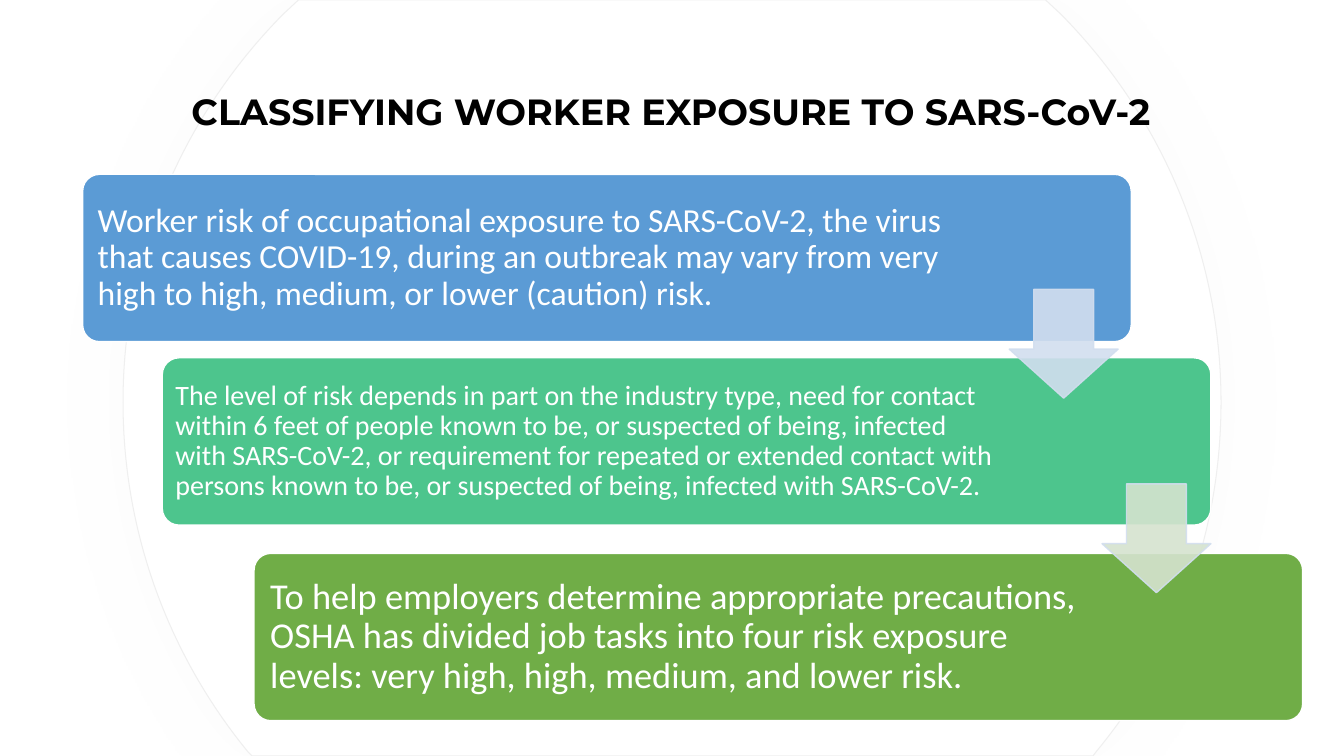
from dataclasses import dataclass

from lxml.etree import SubElement
from pptx import Presentation
from pptx.dml.color import RGBColor
from pptx.enum.shapes import MSO_SHAPE
from pptx.enum.text import MSO_ANCHOR, PP_ALIGN
from pptx.oxml.ns import qn
from pptx.util import Inches, Pt

TITLE = "CLASSIFYING WORKER EXPOSURE TO SARS-CoV-2"
CARDS = [
    dict(left=0.82, top=1.73, wide=8.61, inset=0.1, size=24, fill="5B9BD5",
         text="Worker risk of occupational exposure to SARS-CoV-2, the virus that causes "
              "COVID-19, during an outbreak may vary from very high to high, medium, or "
              "lower (caution) risk."),
    dict(left=1.61, top=3.55, wide=8.31, inset=0.08, size=20, fill="4DC58D",
         text="The level of risk depends in part on the industry type, need for contact "
              "within 6 feet of people known to be, or suspected of being, infected with "
              "SARS-CoV-2, or requirement for repeated or extended contact with persons "
              "known to be, or suspected of being, infected with SARS-CoV-2."),
    dict(left=2.52, top=5.49, wide=8.31, inset=0.11, size=26, fill="70AD47",
         text="To help employers determine appropriate precautions, OSHA has divided job "
              "tasks into four risk exposure levels: very high, high, medium, and lower risk."),
]
ARROWS = [(10.01, 2.87, "D2DEEF"), (10.93, 4.8, "D5E3CF")]
START = (2.96, 0)
RING = [
    ("line", [(10.37, 0), (10.52, 0.14)]),
    ("curve", [(11.5, 1.13), (12.11, 2.49), (12.11, 3.99)]),
    ("curve", [(12.11, 5.31), (11.65, 6.52), (10.87, 7.46)]),
    ("line", [(10.84, 7.5), (2.5, 7.5), (2.46, 7.46)]),
    ("curve", [(1.69, 6.52), (1.22, 5.31), (1.22, 3.99)]),
    ("curve", [(1.22, 2.49), (1.83, 1.13), (2.81, 0.14)]),
]
CARD_W, CARD_H, PAD, ARROW = 10.4, 1.66, 0.05, 1.08


@dataclass(frozen=True)
class Theme:
    body: str = "Calibri"
    head: str = "Montserrat"
    head_size: int = 26
    ink: str = "000000"
    paper: str = "FFFFFF"
    rim: str = "EFEFEF"
    shade: str = "D9D9D9"
    edge: str = "D2DEEF"


THEME = Theme()


def color(code):
    return RGBColor.from_string(code)


def paint(shape, fill, line, width=1):
    shape.shadow.inherit = False
    shape.fill.solid()
    shape.fill.fore_color.rgb = color(fill)
    shape.line.color.rgb = color(line)
    shape.line.width = Pt(width)


def fade(shape, share):
    for node in shape.element.spPr.iter(qn("a:srgbClr")):
        SubElement(node, qn("a:alpha"), val=str(share * 1000))


def write(frame, text, font, size, ink, align, bold=False):
    frame.word_wrap = True
    frame.vertical_anchor = MSO_ANCHOR.MIDDLE
    para = frame.paragraphs[0]
    para.alignment = align
    para.line_spacing = 0.9
    run = para.add_run()
    run.text = text
    run.font.name, run.font.size, run.font.bold = font, Pt(size), bold
    run.font.color.rgb = color(ink)


def bend(ring):
    legs = iter(list(ring.element.spPr.iter(qn("a:lnTo"))))
    for kind, dots in RING:
        group = [next(legs) for _ in dots]
        if kind == "curve":
            first, *rest = group
            first.tag = qn("a:cubicBezTo")
            for leg in rest:
                first.append(leg[0])
                leg.getparent().remove(leg)


def add_ring(shapes):
    pen = shapes.build_freeform(Inches(START[0]), Inches(START[1]))
    pen.add_line_segments([(Inches(x), Inches(y)) for _, dots in RING for x, y in dots])
    ring = pen.convert_to_shape()
    bend(ring)
    paint(ring, THEME.paper, THEME.rim, 0.75)
    glow = SubElement(ring.element.spPr.find(qn("a:effectLst")), qn("a:outerShdw"),
                      blurRad=str(Pt(50)), dist="0", dir="0", algn="ctr", rotWithShape="0")
    tint = SubElement(glow, qn("a:srgbClr"), val=THEME.shade)
    SubElement(tint, qn("a:alpha"), val="8000")


def add_card(shapes, left, top, wide, inset, size, fill, text):
    card = shapes.add_shape(MSO_SHAPE.ROUNDED_RECTANGLE, Inches(left), Inches(top),
                            Inches(CARD_W), Inches(CARD_H))
    card.adjustments[0] = 0.1
    paint(card, fill, THEME.paper)
    box = shapes.add_textbox(Inches(left + PAD), Inches(top + PAD),
                             Inches(wide), Inches(CARD_H - 2 * PAD))
    frame = box.text_frame
    frame.margin_left = frame.margin_right = Inches(inset)
    frame.margin_top = frame.margin_bottom = Inches(inset)
    write(frame, text, THEME.body, size, THEME.paper, PP_ALIGN.LEFT)


def add_arrow(shapes, left, top, fill):
    arrow = shapes.add_shape(MSO_SHAPE.DOWN_ARROW, Inches(left), Inches(top),
                             Inches(ARROW), Inches(ARROW))
    arrow.adjustments[0], arrow.adjustments[1] = 0.55, 0.45
    paint(arrow, fill, THEME.edge)
    fade(arrow, 90)


def main():
    """Build the worker exposure slide."""
    deck = Presentation()
    deck.slide_width, deck.slide_height = Inches(13.33), Inches(7.5)
    slide = deck.slides.add_slide(deck.slide_layouts[5])
    shapes = slide.shapes
    add_ring(shapes)
    for card in CARDS:
        add_card(shapes, **card)
    for arrow in ARROWS:
        add_arrow(shapes, *arrow)
    title = shapes.title
    title.left, title.top = Inches(0.91), Inches(0.4)
    title.width, title.height = Inches(11.5), Inches(1.45)
    write(title.text_frame, TITLE, THEME.head, THEME.head_size, THEME.ink,
          PP_ALIGN.CENTER, True)
    shapes.element.append(title.element)
    deck.save("out.pptx")


if __name__ == "__main__":
    main()
